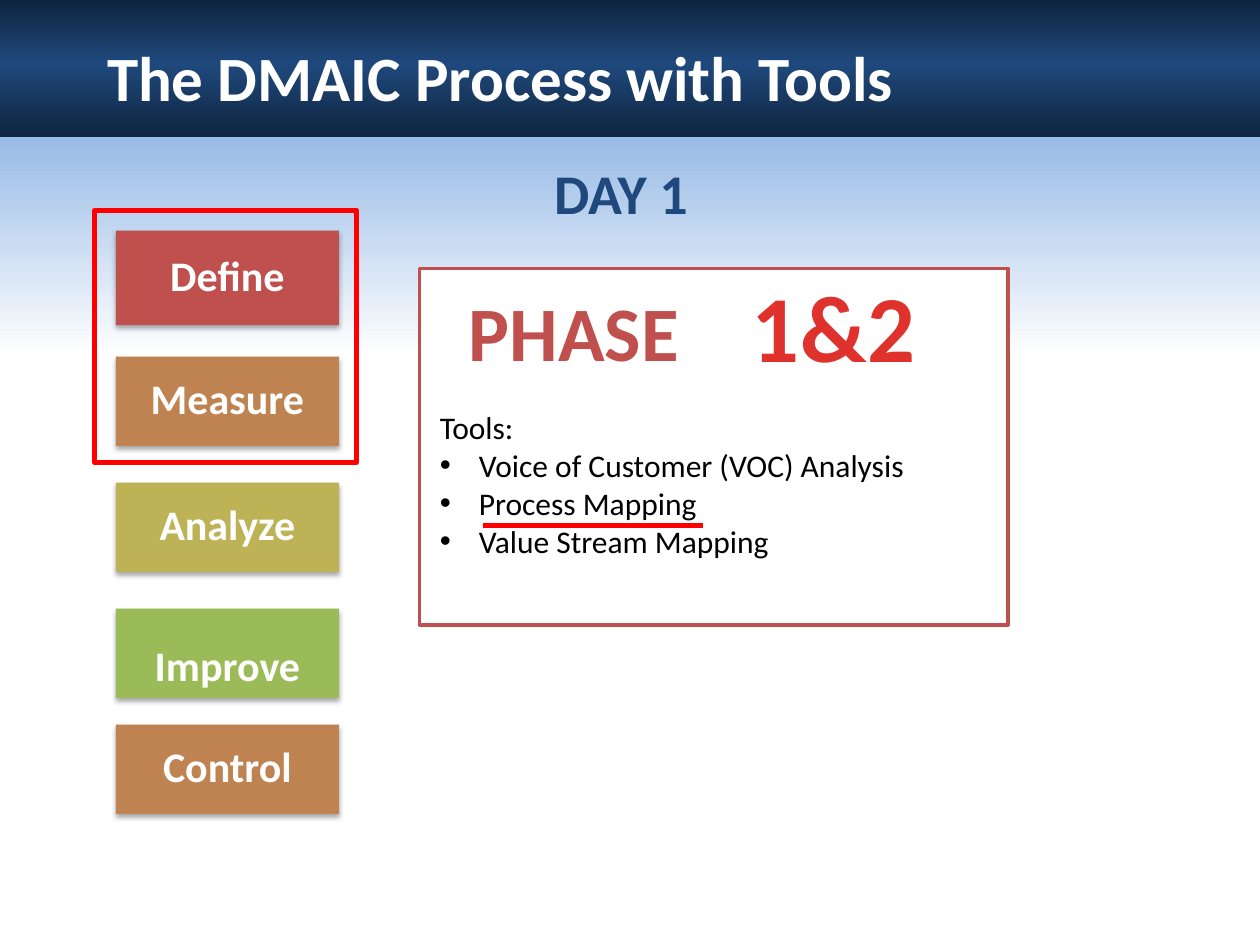
import pptx
import pptx.util
import pptx.dml.color
import pptx.enum.shapes
import pptx.enum.text
import pptx.oxml.ns
from lxml import etree

Inches = pptx.util.Inches
Pt = pptx.util.Pt
qn = pptx.oxml.ns.qn
ALIGN = pptx.enum.text.PP_ALIGN
ANCHOR = pptx.enum.text.MSO_ANCHOR


def rgb(value):
    return pptx.dml.color.RGBColor.from_string(value)


def gradient(fill, element, stops):
    fill.gradient()
    fill.gradient_angle = 270
    gs_list = element.find(".//" + qn("a:gsLst"))
    gs_list.clear()
    for position, color in stops:
        gs = etree.SubElement(gs_list, qn("a:gs"), pos=str(position * 1000))
        etree.SubElement(gs, qn("a:srgbClr"), val=color)


class SlideBuilder:
    font = "Calibri"
    navy = "1F497D"
    brick = "C0504D"
    red = "FF0000"
    white = "FFFFFF"

    def __init__(self, prs):
        self.s = prs.slides.add_slide(prs.slide_layouts[1])

    def run(self, p, text, size, color, bold=True):
        r = p.add_run()
        r.text = text
        r.font.name = self.font
        r.font.size = Pt(size)
        r.font.bold = bold
        r.font.color.rgb = rgb(color)
        return r

    def rect(self, box, fill=None, line=None, width=0):
        sp = self.s.shapes.add_shape(
            pptx.enum.shapes.MSO_SHAPE.RECTANGLE, *map(Inches, box))
        sp.shadow.inherit = False
        if fill:
            sp.fill.solid()
            sp.fill.fore_color.rgb = rgb(fill)
        else:
            sp.fill.background()
        if line:
            sp.line.color.rgb = rgb(line)
            sp.line.width = Pt(width)
        else:
            sp.line.fill.background()
        return sp

    def band(self, box, stops):
        sp = self.rect(box)
        gradient(sp.fill, sp.element.spPr, stops)

    def step(self, text, top, height, color, inset_top=0.13, inset_bottom=0.13):
        sp = self.rect((0.92, top, 1.77, height), color)
        effects = sp.element.spPr.find(qn("a:effectLst"))
        shadow = etree.SubElement(
            effects, qn("a:outerShdw"), blurRad=str(Pt(3.1)),
            dist=str(Pt(1.8)), dir="5400000", rotWithShape="0")
        black = etree.SubElement(shadow, qn("a:srgbClr"), val="000000")
        etree.SubElement(black, qn("a:alpha"), val="35000")
        tf = sp.text_frame
        tf.word_wrap = True
        tf.vertical_anchor = ANCHOR.MIDDLE
        tf.margin_left = tf.margin_right = Inches(0.23)
        tf.margin_top = Inches(inset_top)
        tf.margin_bottom = Inches(inset_bottom)
        p = tf.paragraphs[0]
        p.alignment = ALIGN.CENTER
        p.line_spacing = 0.9
        self.run(p, text, 24, self.white)

    def label(self, text, box, size, color, align=ALIGN.CENTER):
        sp = self.s.shapes.add_textbox(*map(Inches, box))
        tf = sp.text_frame
        tf.word_wrap = False
        p = tf.paragraphs[0]
        p.alignment = align
        return self.run(p, text, size, color)

    def place(self, sp, box, anchor):
        sp.left, sp.top, sp.width, sp.height = map(Inches, box)
        sp.element.getparent().append(sp.element)
        tf = sp.text_frame
        tf.word_wrap = True
        tf.auto_size = pptx.enum.text.MSO_AUTO_SIZE.NONE
        tf.vertical_anchor = anchor
        return tf

    def title(self, text, box):
        tf = self.place(self.s.shapes.title, box, ANCHOR.MIDDLE)
        p = tf.paragraphs[0]
        p.alignment = ALIGN.LEFT
        self.run(p, text, 36, self.white)

    def tools(self, heading, items, box):
        tf = self.place(self.s.placeholders[1], box, ANCHOR.TOP)
        for i, text in enumerate([heading] + items):
            p = tf.paragraphs[0] if i == 0 else tf.add_paragraph()
            p.space_before = Pt(0)
            indent = Inches(0.31) if i else 0
            pPr = p._p.get_or_add_pPr()
            pPr.set("marL", str(indent))
            pPr.set("indent", str(-indent))
            if i:
                etree.SubElement(pPr, qn("a:buFont"), typeface="Arial")
                etree.SubElement(pPr, qn("a:buChar"), char="•")
            else:
                etree.SubElement(pPr, qn("a:buNone"))
            self.run(p, text, 18, "000000", bold=False)

    def line(self, x1, y1, x2, y2, color, width):
        c = self.s.shapes.add_connector(
            pptx.enum.shapes.MSO_CONNECTOR.STRAIGHT,
            *map(Inches, (x1, y1, x2, y2)))
        c.line.color.rgb = rgb(color)
        c.line.width = Pt(width)
        etree.SubElement(c.element.spPr, qn("a:effectLst"))


def main():
    prs = pptx.Presentation()
    prs.slide_width = Inches(10)
    prs.slide_height = Inches(7.5)
    b = SlideBuilder(prs)

    b.band((0, 0.92, 10, 6.58), [(0, "8EB4E3"), (29, b.white), (100, b.white)])
    b.band((0, 0, 10, 1.09), [(0, "0F243E"), (46, b.navy), (100, "0F243E")])

    b.step("Define", 1.83, 0.75, b.brick)
    b.step("Measure", 2.83, 0.71, "BE8351")
    b.step("Analyze", 3.83, 0.71, "BDB255")
    b.step("Improve", 4.83, 0.71, "9BBB59", inset_top=0.23, inset_bottom=0)
    b.step("Control", 5.75, 0.71, "BE8351")

    b.rect((3.33, 2.13, 4.67, 2.83), b.white, b.brick, 2)
    phase = b.label("1&2", (5.81, 2.08, 1.61, 1.01), 54, "E0322D")
    gradient(phase.font.fill, phase._r, [(25, "E0322D"), (100, "A2201C")])
    phase._r.get_or_add_rPr().set("spc", "50")
    b.label("PHASE", (3.39, 2.21, 2.33, 0.84), 44, b.brick)
    b.tools("Tools:", ["Voice of Customer (VOC) Analysis", "Process Mapping",
                       "Value Stream Mapping"], (3.39, 3.19, 4.52, 1.7))
    b.title("The DMAIC Process with Tools", (0.75, 0.25, 9.17, 0.71))
    b.label("DAY 1", (4.3, 1.21, 1.47, 0.64), 32, b.navy, ALIGN.LEFT)

    b.rect((0.75, 1.67, 2.08, 2), line=b.red, width=3)
    b.line(3.83, 4.17, 5.58, 4.17, b.red, 3)
    prs.save("out.pptx")


if __name__ == "__main__":
    main()
